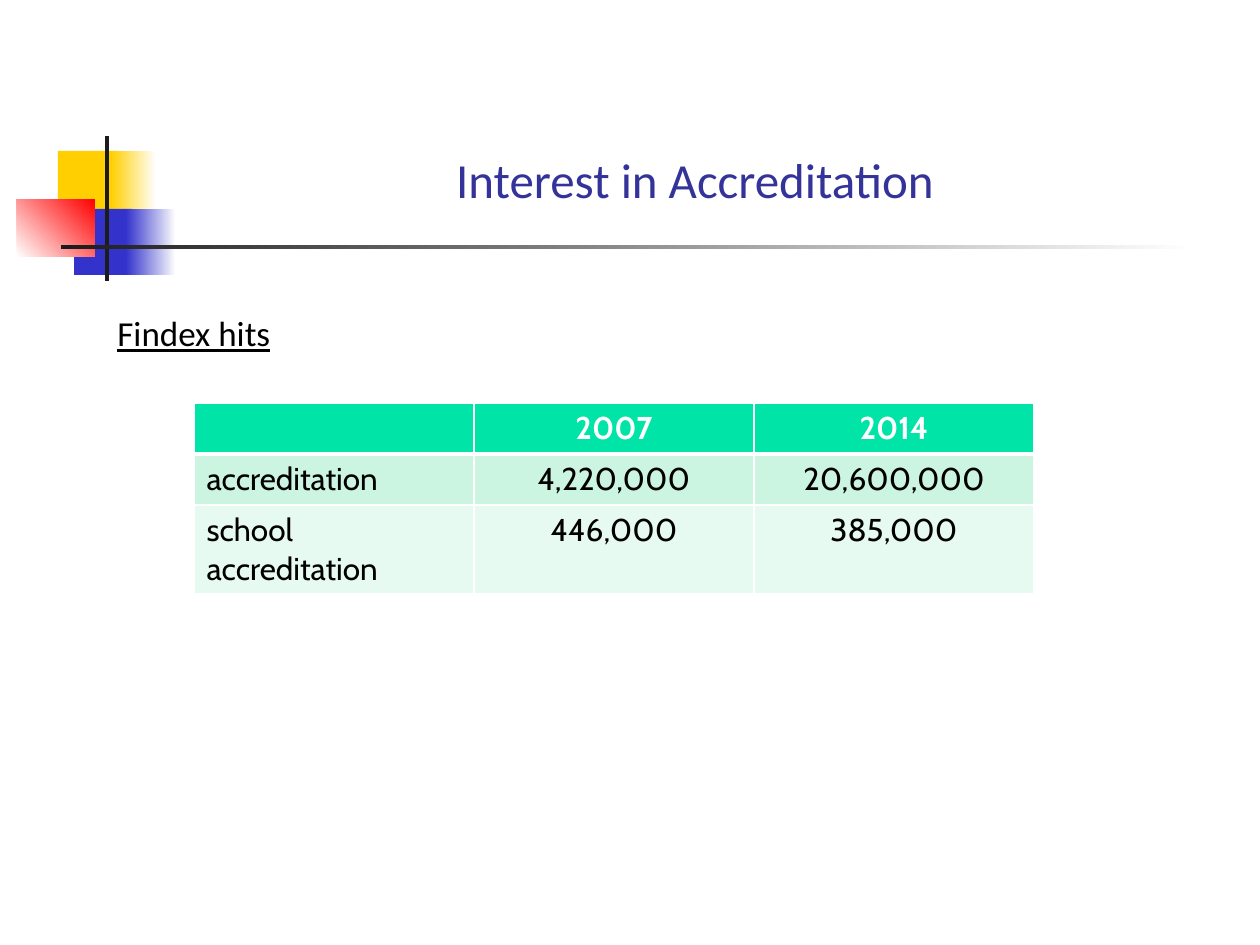
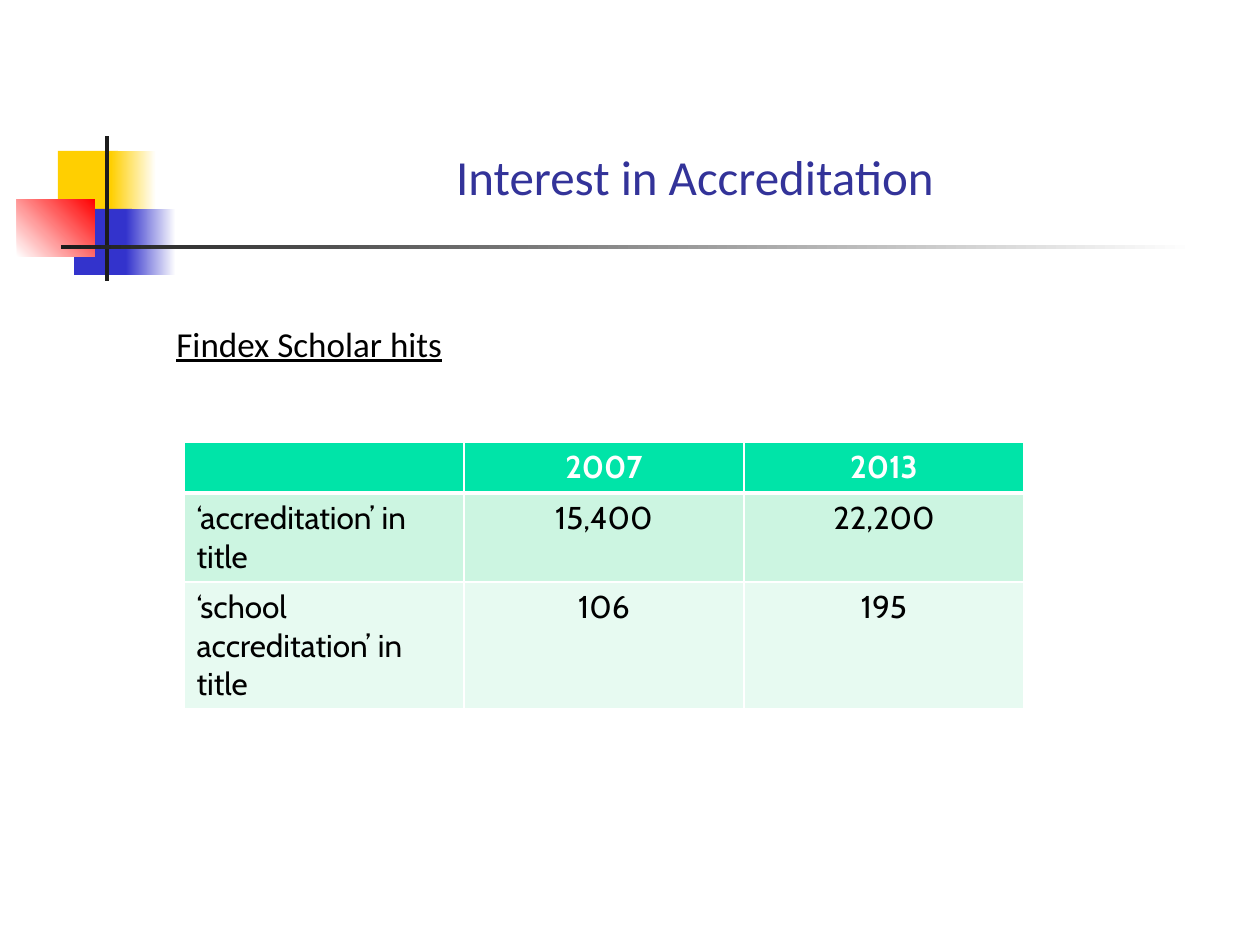
from lxml.etree import SubElement
from pptx import Presentation
from pptx.dml.color import RGBColor
from pptx.enum.shapes import MSO_SHAPE
from pptx.enum.text import MSO_ANCHOR, PP_ALIGN
from pptx.oxml.ns import qn
from pptx.util import Pt

EMU_PER_PX = 914400 / 126

# Shared colours and fonts
WHITE, BLACK, INK = "FFFFFF", "000000", "1C1C1C"
YELLOW, BLUE, RED = "FFCF01", "3333CC", "FF0000"
TITLE_COLOUR = "333399"
HEADER_FILL, BODY_FILLS = "00E4A8", ("CCF5E1", "E7FAF1")
TEXT_FONT, TABLE_FONT = "Calibri", "Cabin"

# Table measures in px
COLUMN_WIDTH, LINE_HEIGHT, CELL_PADDING = 280, 38, 13


def px(length):
    return round(length * EMU_PER_PX)


def box(left, top, width, height):
    return px(left), px(top), px(width), px(height)


def colour(value):
    return RGBColor.from_string(value)


def add_block(slide, bounds, start, end=None, angle=0):
    """Draw a rectangle, solid or fading from start to end."""
    shape = slide.shapes.add_shape(MSO_SHAPE.RECTANGLE, *box(*bounds))
    shape.shadow.inherit = False
    shape.line.fill.background()
    if end is None:
        shape.fill.solid()
        shape.fill.fore_color.rgb = colour(start)
        return
    shape.fill.gradient()
    shape.fill.gradient_angle = angle
    for stop, value in zip(shape.fill.gradient_stops, (start, end)):
        stop.color.rgb = colour(value)


def add_run(paragraph, text, font, size, value, bold=False, underline=False):
    run = paragraph.add_run()
    run.text = text
    run.font.name = font
    run.font.size = Pt(size)
    run.font.bold = bold
    run.font.underline = underline
    run.font.color.rgb = colour(value)


def add_text_frame(slide, bounds):
    frame = slide.shapes.add_textbox(*box(*bounds)).text_frame
    frame.word_wrap = True
    return frame


def add_motif(slide):
    # Coloured squares, each with a fading right part
    add_block(slide, (58, 151, 60, 66), YELLOW)
    add_block(slide, (111, 151, 45, 66), YELLOW, WHITE)
    add_block(slide, (74, 209, 58, 66), BLUE)
    add_block(slide, (126, 209, 50, 66), BLUE, WHITE)
    add_block(slide, (17, 199, 78, 58), WHITE, RED, angle=45)
    # Crossing bars
    add_block(slide, (105, 136, 4, 145), INK)
    add_block(slide, (61, 245, 1134, 4), INK, WHITE)


def add_title(slide, text, top, height):
    frame = add_text_frame(slide, (184, top, 1022, height))
    frame.vertical_anchor = MSO_ANCHOR.BOTTOM
    paragraph = frame.paragraphs[0]
    paragraph.alignment = PP_ALIGN.CENTER
    add_run(paragraph, text, TEXT_FONT, 28, TITLE_COLOUR)


def add_heading(slide, text, bounds):
    frame = add_text_frame(slide, bounds)
    frame.margin_top = px(57)
    add_run(frame.paragraphs[0], text, TEXT_FONT, 20, BLACK, underline=True)


def add_borders(cell, **widths):
    properties = cell._tc.get_or_add_tcPr()
    for side in "LRTB":
        width = Pt(widths.get(side, 1))
        line = SubElement(properties, qn(f"a:ln{side}"), w=str(width))
        fill = SubElement(line, qn("a:solidFill"))
        SubElement(fill, qn("a:srgbClr"), val=WHITE)


def add_hits_table(slide, left, top, rows, line_counts):
    heights = [count * LINE_HEIGHT + CELL_PADDING for count in line_counts]
    columns = len(rows[0])
    bounds = box(left, top, columns * COLUMN_WIDTH, sum(heights))
    table = slide.shapes.add_table(len(rows), columns, *bounds).table
    for column in table.columns:
        column.width = px(COLUMN_WIDTH)
    for row_index, (texts, height) in enumerate(zip(rows, heights)):
        table.rows[row_index].height = px(height)
        is_header = row_index == 0
        for column_index, text in enumerate(texts):
            cell = table.cell(row_index, column_index)
            add_borders(cell, B=3 if is_header else 1, T=3 if row_index == 1 else 1)
            cell.fill.solid()
            cell.fill.fore_color.rgb = colour(
                HEADER_FILL if is_header else BODY_FILLS[row_index - 1])
            paragraph = cell.text_frame.paragraphs[0]
            if column_index:
                paragraph.alignment = PP_ALIGN.CENTER
            if text:
                add_run(paragraph, text, TABLE_FONT, 18,
                        WHITE if is_header else BLACK, bold=is_header)


def add_slide(presentation):
    slide = presentation.slides.add_slide(presentation.slide_layouts[6])
    add_motif(slide)
    return slide


def main():
    presentation = Presentation()
    presentation.slide_width, presentation.slide_height = px(1260), px(945)
    title = "Interest in Accreditation"

    # Web search hits
    slide = add_slide(presentation)
    add_title(slide, title, 66, 149)
    add_heading(slide, "Findex hits", (105, 255, 1091, 605))
    add_hits_table(slide, 194, 403, [
        ("", "2007", "2014"),
        ("accreditation", "4,220,000", "20,600,000"),
        ("school accreditation", "446,000", "385,000"),
    ], line_counts=(1, 1, 2))

    # Scholarly search hits
    slide = add_slide(presentation)
    add_title(slide, title, 55, 157)
    add_heading(slide, "Findex Scholar hits", (164, 265, 1052, 596))
    add_hits_table(slide, 184, 442, [
        ("", "2007", "2013"),
        ("‘accreditation’ in title", "15,400", "22,200"),
        ("‘school accreditation’ in title", "106", "195"),
    ], line_counts=(1, 2, 3))

    presentation.save("out.pptx")


if __name__ == "__main__":
    main()
